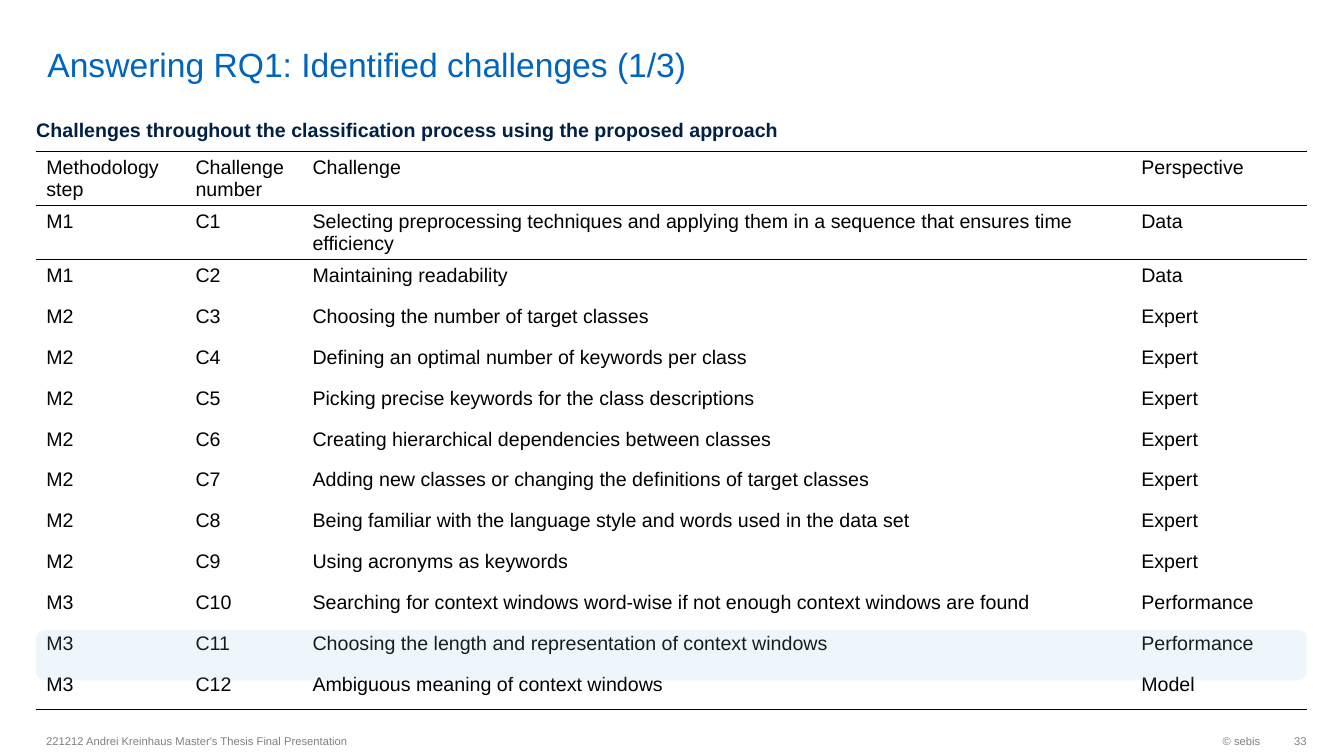
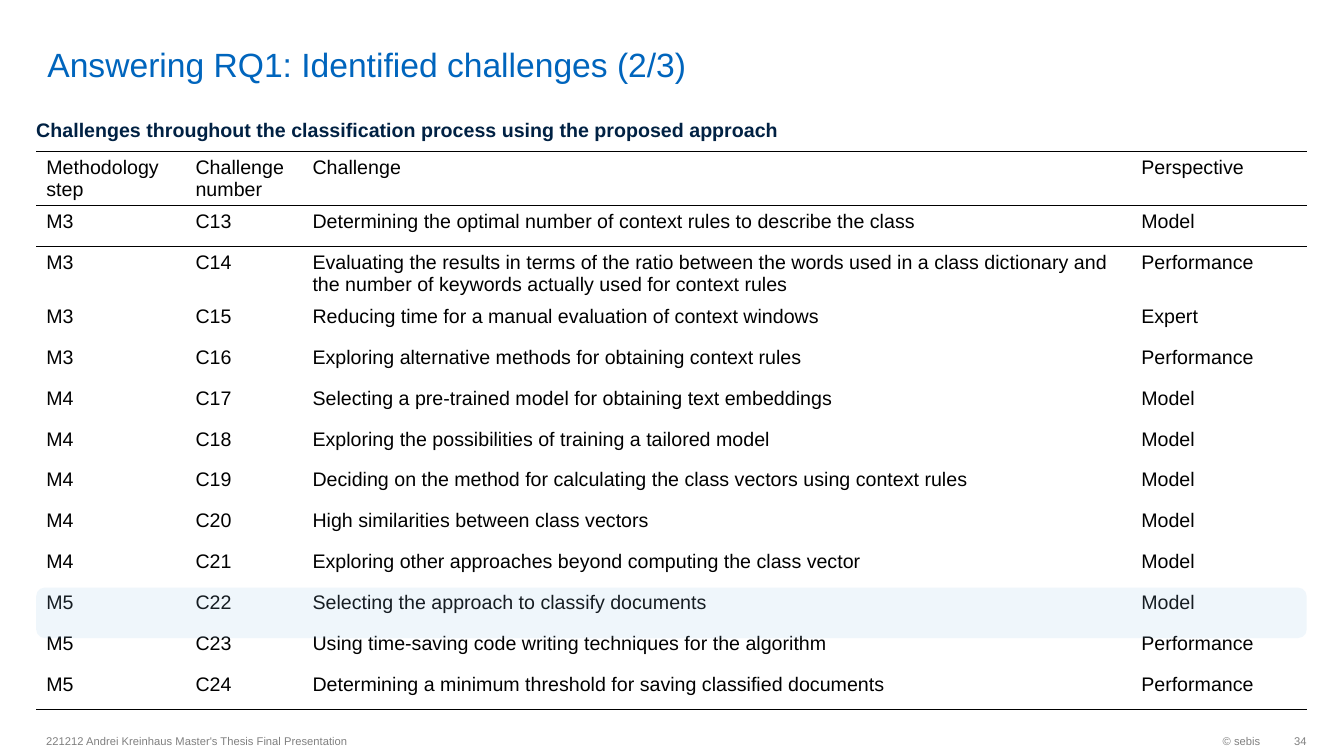
from lxml.etree import SubElement as Sub
from pptx import Presentation
from pptx.dml.color import RGBColor
from pptx.enum.shapes import MSO_SHAPE as Shape
from pptx.enum.text import MSO_ANCHOR as Anchor, MSO_AUTO_SIZE as Fit, PP_ALIGN as Align
from pptx.oxml.ns import qn
from pptx.util import Inches, Pt

# Colours
BLUE = RGBColor(0x00, 0x65, 0xBD)
NAVY = RGBColor(0x00, 0x21, 0x43)
GREY = RGBColor(0x80, 0x80, 0x80)
BLACK = RGBColor(0x00, 0x00, 0x00)
SKY = RGBColor(0x98, 0xC6, 0xEA)

# Grid in inches
WIDTH, HEIGHT = 13.33, 7.5
LEFT, WIDE = 0.36, 12.6
TOP = 1.5
COLS = (1.48, 1.16, 8.22, 1.74)
ROW = 5.28 / 13
FOOT, LINE = 7.19, 0.32
BAND = 0.5

# Text formats
TITLE = {"size": Pt(24), "name": "Arial", "bold": False}
HEAD = {"size": Pt(14), "name": "Arial", "bold": True}
CELL = {"size": Pt(14), "name": "Arial", "bold": False}
SMALL = {"size": Pt(8), "name": "Arial", "bold": False}

# Words on every slide
TOPIC = "Challenges throughout the classification process using the proposed approach"
TALK = "221212 Andrei Kreinhaus Master's Thesis Final Presentation"
OWNER = "© sebis"
HEADS = ("Methodology step", "Challenge number", "Challenge", "Perspective")
PLAIN = "{2D5ABB26-0587-4C30-8999-92F81FD0307C}"  # table style without grid

# Slide number, title, first challenge, band top, rows of (step, challenge, view)
PAGES = (
    (33, "Answering RQ1: Identified challenges (1/3)", 1, 6.25, (
        ("M1", "Selecting preprocessing techniques and applying them in a sequence "
               "that ensures time efficiency", "Data"),
        ("M1", "Maintaining readability", "Data"),
        ("M2", "Choosing the number of target classes", "Expert"),
        ("M2", "Defining an optimal number of keywords per class", "Expert"),
        ("M2", "Picking precise keywords for the class descriptions", "Expert"),
        ("M2", "Creating hierarchical dependencies between classes", "Expert"),
        ("M2", "Adding new classes or changing the definitions of target classes", "Expert"),
        ("M2", "Being familiar with the language style and words used in the data set", "Expert"),
        ("M2", "Using acronyms as keywords", "Expert"),
        ("M3", "Searching for context windows word-wise if not enough context windows "
               "are found", "Performance"),
        ("M3", "Choosing the length and representation of context windows", "Performance"),
        ("M3", "Ambiguous meaning of context windows", "Model"),
    )),
    (34, "Answering RQ1: Identified challenges (2/3)", 13, 5.83, (
        ("M3", "Determining the optimal number of context rules to describe the class", "Model"),
        ("M3", "Evaluating the results in terms of the ratio between the words used in a "
               "class dictionary and the number of keywords actually used for context rules",
         "Performance"),
        ("M3", "Reducing time for a manual evaluation of context windows", "Expert"),
        ("M3", "Exploring alternative methods for obtaining context rules", "Performance"),
        ("M4", "Selecting a pre-trained model for obtaining text embeddings", "Model"),
        ("M4", "Exploring the possibilities of training a tailored model", "Model"),
        ("M4", "Deciding on the method for calculating the class vectors using context rules",
         "Model"),
        ("M4", "High similarities between class vectors", "Model"),
        ("M4", "Exploring other approaches beyond computing the class vector", "Model"),
        ("M5", "Selecting the approach to classify documents", "Model"),
        ("M5", "Using time-saving code writing techniques for the algorithm", "Performance"),
        ("M5", "Determining a minimum threshold for saving classified documents", "Performance"),
    )),
)


def write(frame, text, form, ink, align=Align.LEFT):
    """Fill a text frame with one formatted paragraph."""
    para = frame.paragraphs[0]
    para.alignment = align
    run = para.add_run()
    run.text = text
    for key, value in form.items():
        setattr(run.font, key, value)
    run.font.color.rgb = ink


def shape_frame(frame, anchor, pads):
    """Set anchor, wrapping and insets (left, top, right, bottom)."""
    frame.auto_size = Fit.NONE
    frame.word_wrap = True
    frame.vertical_anchor = anchor
    for side, pad in zip(("left", "top", "right", "bottom"), pads):
        setattr(frame, f"margin_{side}", Inches(pad))


def add_title(slide, text):
    title = slide.shapes.title
    spot = {"left": 0.37, "top": 0.05, "width": 11.58, "height": 0.79}
    for key, value in spot.items():
        setattr(title, key, Inches(value))
    shape_frame(title.text_frame, Anchor.BOTTOM, (0.1, 0, 0.1, 0))
    write(title.text_frame, text, TITLE, BLUE)


def add_label(slide, text, box, form, ink, anchor=Anchor.MIDDLE,
              pads=(0.1, 0.05, 0.1, 0.05), align=Align.LEFT):
    label = slide.shapes.add_textbox(*map(Inches, box))
    shape_frame(label.text_frame, anchor, pads)
    write(label.text_frame, text, form, ink, align)


def add_footer(slide, number):
    right = LEFT + WIDE
    slot = 0.36  # width of the slide number
    add_label(slide, OWNER, (right - slot - 2.34, FOOT, 2.34, LINE), SMALL, GREY,
              align=Align.RIGHT)
    add_label(slide, TALK, (LEFT, FOOT, WIDE / 2, LINE), SMALL, GREY)
    add_label(slide, str(number), (right - slot, FOOT, slot, LINE), SMALL, GREY,
              pads=(0.1, 0.05, 0, 0.05), align=Align.RIGHT)


def rule(cell, sides):
    """Draw black borders; they must come before the cell's fill."""
    props = cell._tc.get_or_add_tcPr()
    for side in sides:
        edge = Sub(props, qn(f"a:ln{side}"), w=str(Pt(1)))
        fill = Sub(edge, qn("a:solidFill"))
        Sub(fill, qn("a:srgbClr"), val=str(BLACK))


def add_grid(slide, first, items):
    rows = [HEADS] + [(step, f"C{first + i}", text, view)
                      for i, (step, text, view) in enumerate(items)]
    box = map(Inches, (LEFT, TOP, WIDE, ROW * len(rows)))
    table = slide.shapes.add_table(len(rows), len(COLS), *box).table
    table.first_row = table.horz_banding = False
    table._tbl.tblPr.find(qn("a:tableStyleId")).text = PLAIN
    for col, width in zip(table.columns, COLS):
        col.width = Inches(width)
    ruled = {0: "TB", 1: "TB", len(rows) - 1: "B"}
    for r, texts in enumerate(rows):
        table.rows[r].height = Inches(ROW)
        for c, text in enumerate(texts):
            cell = table.cell(r, c)
            write(cell.text_frame, text, CELL, BLACK)
            rule(cell, ruled.get(r, ""))
            cell.fill.background()


def add_band(slide, top):
    """Lay a translucent highlight over the table."""
    band = slide.shapes.add_shape(Shape.ROUNDED_RECTANGLE,
                                  *map(Inches, (LEFT, top, WIDE, BAND)))
    band.shadow.inherit = False
    band.line.fill.background()
    band.fill.solid()
    band.fill.fore_color.rgb = SKY
    ink = band._element.spPr.find(qn("a:solidFill"))[0]
    Sub(ink, qn("a:alpha"), val="15000")


def main():
    deck = Presentation()
    deck.slide_width, deck.slide_height = Inches(WIDTH), Inches(HEIGHT)
    for number, title, first, top, items in PAGES:
        slide = deck.slides.add_slide(deck.slide_layouts[5])
        add_title(slide, title)
        add_footer(slide, number)
        add_grid(slide, first, items)
        add_label(slide, TOPIC, (LEFT, 1.17, WIDE * 0.6, 0.33), HEAD, NAVY,
                  Anchor.TOP, (0, 0, 0, 0))
        add_band(slide, top)
    deck.save("out.pptx")


if __name__ == "__main__":
    main()
